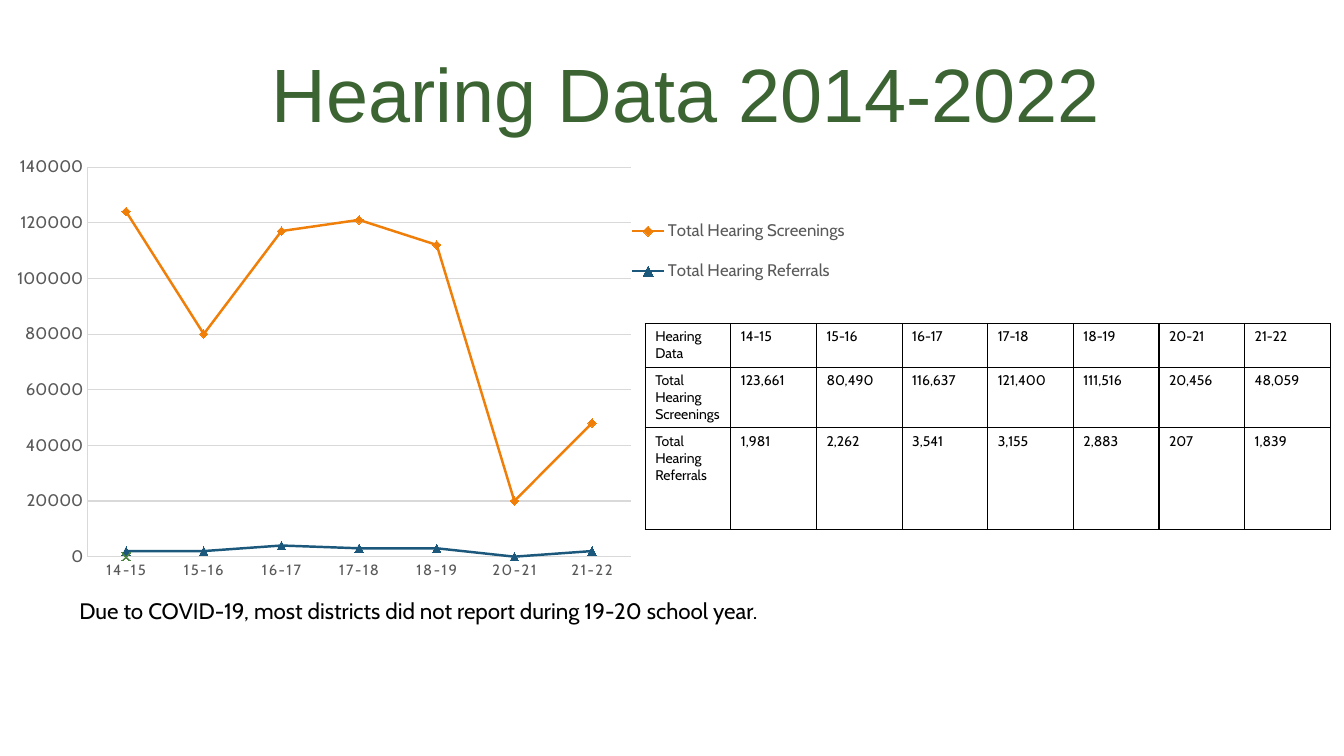
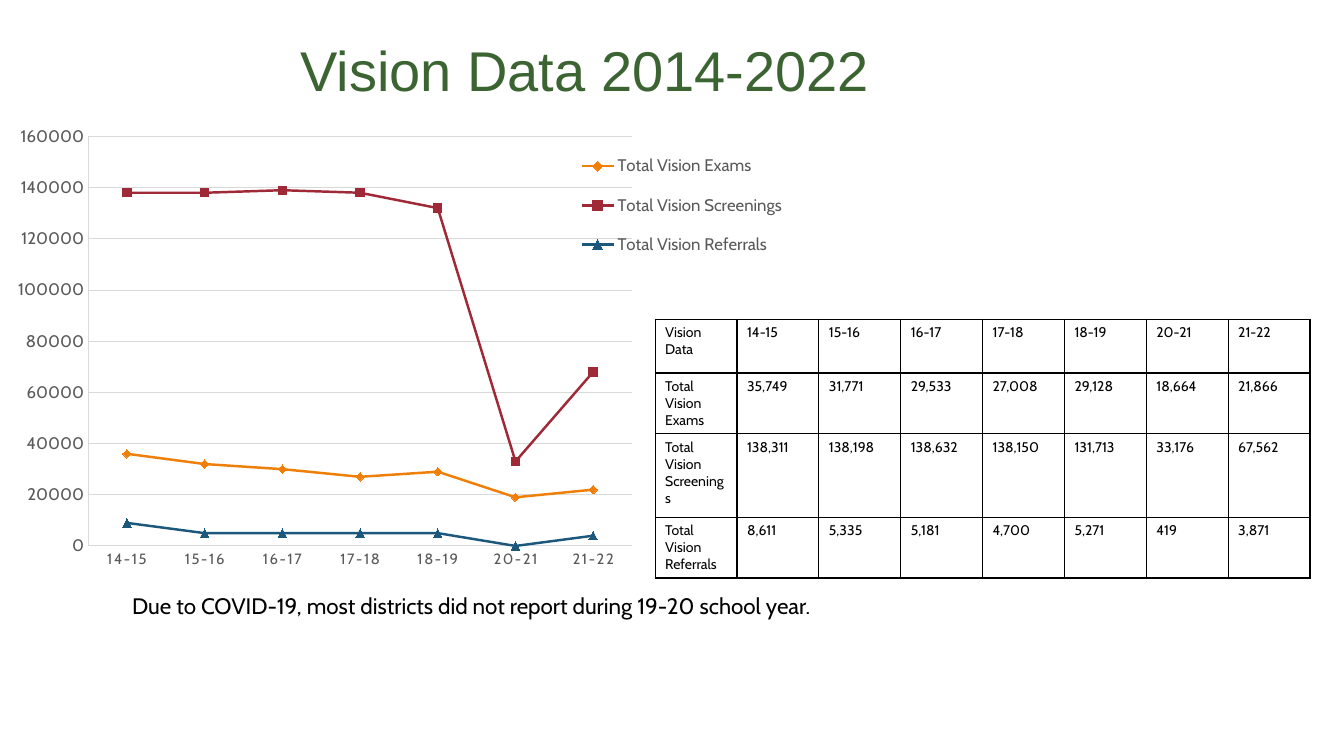
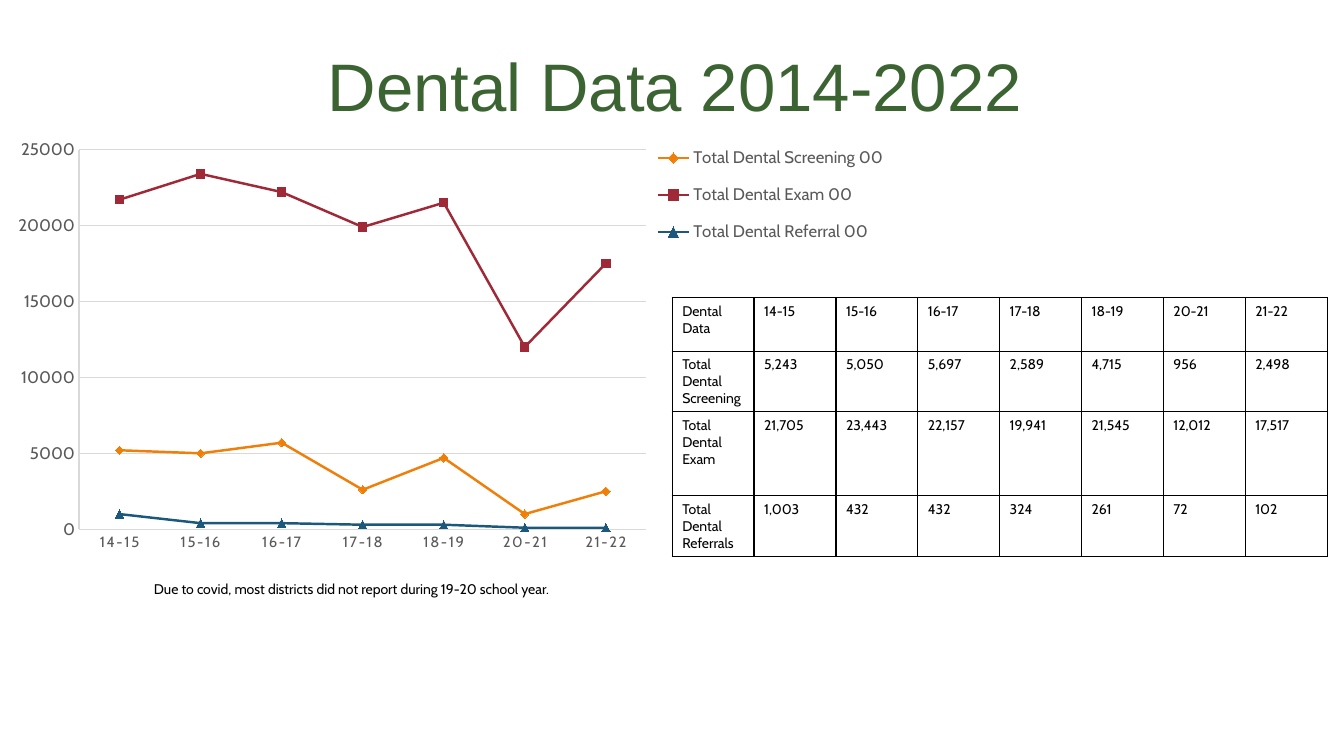
from dataclasses import dataclass

from lxml import etree
from pptx import Presentation
from pptx.chart.data import CategoryChartData
from pptx.dml.color import RGBColor
from pptx.enum.chart import XL_CHART_TYPE, XL_LEGEND_POSITION, XL_MARKER_STYLE, XL_TICK_MARK
from pptx.enum.text import MSO_ANCHOR, MSO_AUTO_SIZE, PP_ALIGN
from pptx.oxml import parse_xml
from pptx.oxml.ns import nsdecls, qn
from pptx.util import Cm, Pt


@dataclass(frozen=True)
class Theme:
    head: str = "Arial"
    body: str = "Cabin"
    green: RGBColor = RGBColor(0x3B, 0x64, 0x32)
    black: RGBColor = RGBColor(0, 0, 0)
    gray: RGBColor = RGBColor(0x59, 0x59, 0x59)
    grid: RGBColor = RGBColor(0xD9, 0xD9, 0xD9)
    cell: float = 10
    cats: float = 10.6
    axis: float = 12
    thin: float = 0.75
    line: float = 1.75
    mark: int = 6


T = Theme()
LOOKS = {
    "orange": (RGBColor(0xF0, 0x7F, 0x09), XL_MARKER_STYLE.DIAMOND),
    "red": (RGBColor(0x9F, 0x29, 0x36), XL_MARKER_STYLE.SQUARE),
    "blue": (RGBColor(0x1B, 0x58, 0x7C), XL_MARKER_STYLE.TRIANGLE),
    "leaf": (RGBColor(0x4E, 0x85, 0x42), XL_MARKER_STYLE.X),
}
YEARS = ["14-15", "15-16", "16-17", "17-18", "18-19", "20-21", "21-22"]
NOTE = "Due to {}, most districts did not report during 19-20 school year."

# Boxes are left, top, width, height in cm; plot and legend start at the chart's corner.
# Rows are table label, legend label, look, values; the chart rounds values to unit.
SLIDES = [
    dict(
        topic="Hearing", size=54, title=(6.6, 1.05, 21.59, 2.57), wrap=True,
        chart=(0, 3.73, 22.2, 11.07), plot=(2.2, 0.48, 13.7, 9.82),
        legend=(15.73, 1.34, 5.77, 2.52), top=140000, step=20000, unit=1000,
        table=(16.26, 8.15, 17.27, 5.21), heights=(0.84, 1.14, 2.57),
        note=(1.75, 14.92, 18.44, 0.94), cause="COVID-19", small=16,
        rows=[
            ("Total Hearing Screenings", "Total Hearing Screenings", "orange",
             (123661, 80490, 116637, 121400, 111516, 20456, 48059)),
            ("Total Hearing Referrals", "Total Hearing Referrals", "blue",
             (1981, 2262, 3541, 3155, 2883, 207, 1839)),
        ],
        extra=[("Series 3", "leaf", (0,))],
    ),
    dict(
        topic="Vision", size=40, title=(7.32, 0.76, 14.99, 1.96), wrap=True,
        chart=(0, 2.95, 21.92, 11.61), plot=(2.22, 0.49, 13.71, 10.32),
        legend=(14.45, 0.5, 5.48, 3.45), top=160000, step=20000, unit=1000,
        table=(16.51, 8.05, 16.51, 6.53), heights=(1.35, 0.61, 2.11, 0.61),
        note=(3.08, 14.8, 19.2, 0.94), cause="COVID-19", small=16,
        rows=[
            ("Total Vision Exams", "Total Vision Exams", "orange",
             (35749, 31771, 29533, 27008, 29128, 18664, 21866)),
            ("Total Vision Screenings", "Total Vision Screenings", "red",
             (138311, 138198, 138632, 138150, 131713, 33176, 67562)),
            ("Total Vision Referrals", "Total Vision Referrals", "blue",
             (8611, 5335, 5181, 4700, 5271, 419, 3871)),
        ],
        extra=[],
    ),
    dict(
        topic="Dental", size=48, title=(8, 0.99, 18.21, 2.31), wrap=False,
        chart=(0, 3.3, 22.91, 10.85), plot=(1.99, 0.47, 14.3, 9.57),
        legend=(16.44, 0, 5.95, 3.23), top=25000, step=5000, unit=100,
        table=(16.94, 7.5, 16.51, 6.53), heights=(1.35, 0.61, 2.11, 0.61),
        note=(3.63, 14.5, 17.12, 0.69), cause="covid", small=10,
        rows=[
            ("Total Dental Screening", "Total Dental Screening 00", "orange",
             (5243, 5050, 5697, 2589, 4715, 956, 2498)),
            ("Total Dental Exam", "Total Dental Exam 00", "red",
             (21705, 23443, 22157, 19941, 21545, 12012, 17517)),
            ("Total Dental Referrals", "Total Dental Referral 00", "blue",
             (1003, 432, 432, 324, 261, 72, 102)),
        ],
        extra=[],
    ),
]


def style(font, name, size, color):
    font.name, font.size, font.bold = name, Pt(size), False
    font.color.rgb = color


def layout(box, chart, inner=False):
    """Build a fixed layout, turning a box in cm into shares of the chart's size."""
    wide, high = chart[2:]
    tags = ["xMode", "yMode", "x", "y", "w", "h"]
    vals = ["edge", "edge", *(round(a / b, 4) for a, b in zip(box, (wide, high) * 2))]
    if inner:
        tags, vals = ["layoutTarget", *tags], ["inner", *vals]
    body = "".join(f'<c:{tag} val="{val}"/>' for tag, val in zip(tags, vals))
    return parse_xml(f'<c:layout {nsdecls("c")}><c:manualLayout>{body}</c:manualLayout></c:layout>')


deck = Presentation()
deck.slide_width, deck.slide_height = Cm(33.87), Cm(19.05)

for page in SLIDES:
    slide = deck.slides.add_slide(deck.slide_layouts[5])

    # Title and note
    title = slide.shapes.title
    title.left, title.top, title.width, title.height = map(Cm, page["title"])
    note = slide.shapes.add_textbox(*map(Cm, page["note"]))
    for shape, text, wrap, look in (
        (title, f"{page['topic']} Data 2014-2022", page["wrap"], (T.head, page["size"], T.green)),
        (note, NOTE.format(page["cause"]), True, (T.body, page["small"], T.black)),
    ):
        frame = shape.text_frame
        frame.text = text
        frame.word_wrap = wrap
        frame.auto_size = MSO_AUTO_SIZE.SHAPE_TO_FIT_TEXT
        frame.vertical_anchor = MSO_ANCHOR.TOP
        frame.paragraphs[0].alignment = PP_ALIGN.LEFT
        style(frame.paragraphs[0].font, *look)

    # Chart
    lines = [row[1:] for row in page["rows"]] + page["extra"]
    data = CategoryChartData()
    data.categories = YEARS
    for name, _, vals in lines:
        data.add_series(name, [round(val / page["unit"]) * page["unit"] for val in vals])
    chart = slide.shapes.add_chart(
        XL_CHART_TYPE.LINE_MARKERS, *map(Cm, page["chart"]), data).chart
    chart.has_title = False
    style(chart.font, T.body, T.cell, T.black)
    for series, (_, look, _) in zip(chart.plots[0].series, lines):
        color, mark = LOOKS[look]
        series.smooth = False
        series.format.line.color.rgb = color
        series.format.line.width = Pt(T.line)
        series.marker.style, series.marker.size = mark, T.mark
        if mark == XL_MARKER_STYLE.X:
            series.marker.format.fill.background()
        else:
            series.marker.format.fill.solid()
            series.marker.format.fill.fore_color.rgb = color
        series.marker.format.line.color.rgb = color
    chart.plots[0].vary_by_categories = False

    cats, axis = chart.category_axis, chart.value_axis
    axis.maximum_scale, axis.minimum_scale = page["top"], 0
    axis.major_unit = page["step"]
    axis.has_major_gridlines = True
    axis.tick_labels.number_format = "General"
    axis.tick_labels.number_format_is_linked = False
    for part, size in ((cats, T.cats), (axis, T.axis)):
        part.major_tick_mark = part.minor_tick_mark = XL_TICK_MARK.NONE
        style(part.tick_labels.font, T.body, size, T.gray)
    for part in (cats, axis, axis.major_gridlines):
        part.format.line.color.rgb = T.grid
        part.format.line.width = Pt(T.thin)
    next(cats._element.iter(qn("a:defRPr"))).set("spc", "120")

    chart.has_legend = True
    legend = chart.legend
    legend.position = XL_LEGEND_POSITION.RIGHT
    legend.include_in_layout = False
    style(legend.font, T.body, T.axis, T.gray)
    area = chart._chartSpace.chart.plotArea
    for part in (area, legend._element):
        for old in part.findall(qn("c:layout")):
            part.remove(old)
    area.insert(0, layout(page["plot"], page["chart"], inner=True))
    over = legend._element.find(qn("c:overlay"))
    for num in range(len(page["rows"]), len(lines)):
        over.addprevious(parse_xml(
            f'<c:legendEntry {nsdecls("c")}><c:idx val="{num}"/><c:delete val="1"/></c:legendEntry>'))
    over.addprevious(layout(page["legend"], page["chart"]))

    # Table
    grid = [[f"{page['topic']} Data", *YEARS]]
    grid += [[label, *(f"{val:,}" for val in vals)] for label, _, _, vals in page["rows"]]
    table = slide.shapes.add_table(len(grid), len(grid[0]), *map(Cm, page["table"])).table
    table.first_row = table.horz_banding = False
    for col in table.columns:
        col.width = Cm(page["table"][2] / len(grid[0]))
    for row, high, texts in zip(table.rows, page["heights"], grid):
        row.height = Cm(high)
        for cell, text in zip(row.cells, texts):
            cell.text = text
            style(cell.text_frame.paragraphs[0].font, T.body, T.cell, T.black)
            cell.fill.background()
            props = cell._tc.get_or_add_tcPr()
            for spot, side in enumerate(("lnL", "lnR", "lnT", "lnB")):
                edge = etree.Element(qn(f"a:{side}"), w=str(Pt(1)))
                fill = etree.SubElement(edge, qn("a:solidFill"))
                etree.SubElement(fill, qn("a:srgbClr"), val=str(T.black))
                props.insert(spot, edge)

deck.save("out.pptx")
